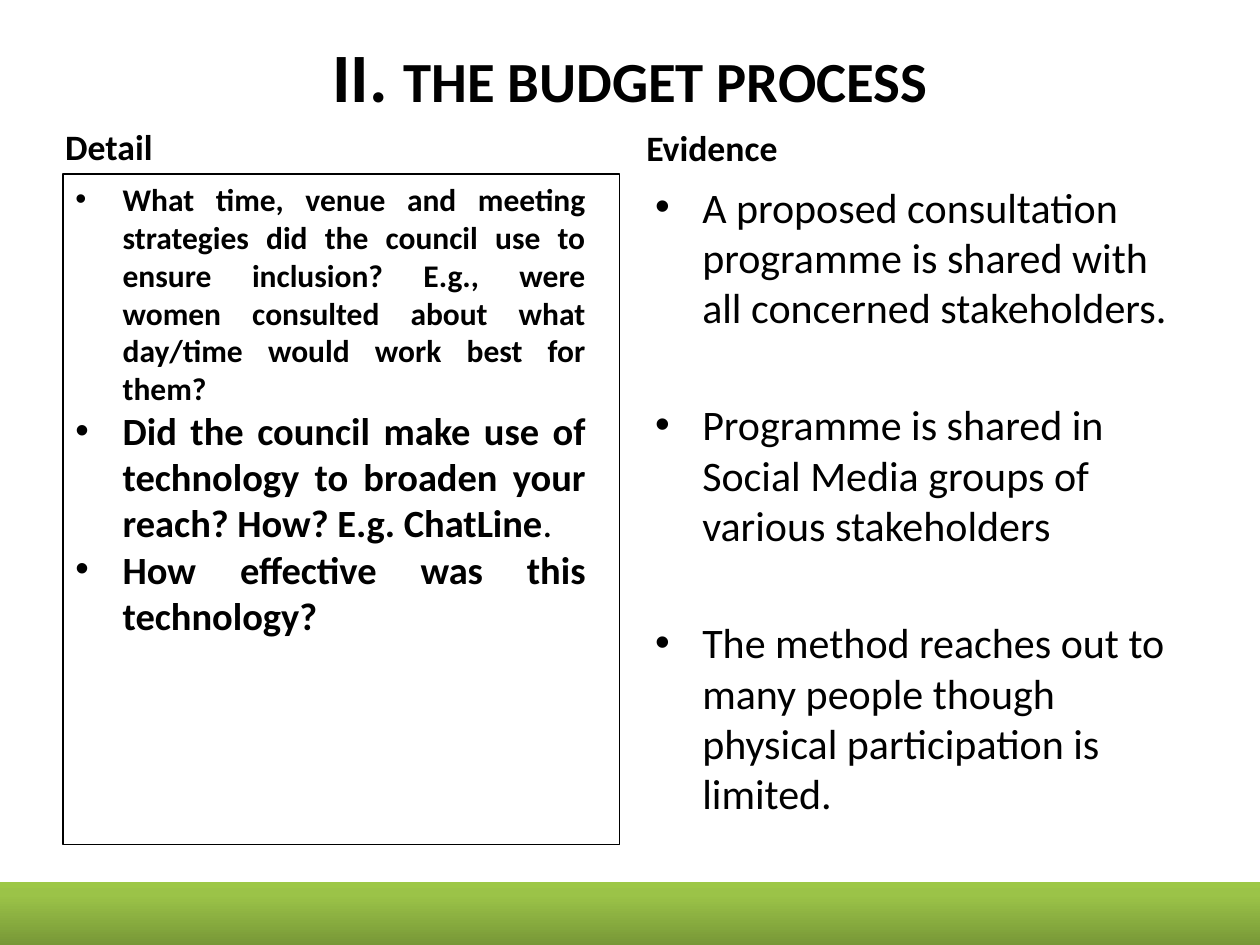
from copy import deepcopy
from lxml import etree
from pptx import Presentation
from pptx.dml.color import RGBColor
from pptx.enum import shapes, text
from pptx.oxml import ns
from pptx.util import Pt

BLACK = RGBColor(0x00, 0x00, 0x00)
GREEN_STOPS = [
    (0, RGBColor(0x77, 0x97, 0x37)),
    (0.8, RGBColor(0x9B, 0xC3, 0x48)),
    (1, RGBColor(0x9D, 0xC7, 0x46)),
]


def add_box(left, top, width, height, anchor):
    box = slide.shapes.add_textbox(Pt(left), Pt(top), Pt(width), Pt(height))
    box.text_frame.word_wrap = True
    box.text_frame.vertical_anchor = anchor
    return box


def write(paragraph, words, size, bold, bullet=False):
    paragraph.text = words
    font = paragraph.font
    font.name, font.size, font.bold = "Calibri", Pt(size), bold
    font.color.rgb = BLACK
    if bullet:
        properties = paragraph._p.get_or_add_pPr()
        properties.set("marL", str(Pt(27)))
        properties.set("indent", str(Pt(-27)))
        mark_font = etree.Element(ns.qn("a:buFont"), typeface="Arial")
        mark = etree.Element(ns.qn("a:buChar"), char="•")
        properties.insert(0, mark_font)
        mark_font.addnext(mark)


prs = Presentation()
prs.slide_width, prs.slide_height = Pt(720), Pt(540)
slide = prs.slides.add_slide(prs.slide_layouts[6])

title = add_box(36, 21.6, 648, 90, text.MSO_ANCHOR.MIDDLE).text_frame
title.margin_top, title.margin_bottom = 0, Pt(48)
heading = title.paragraphs[0]
write(heading, "II. ", 39.6, True)
heading.alignment = text.PP_ALIGN.CENTER
topic = heading.add_run()
topic.text = "THE BUDGET PROCESS"
topic.font.size = Pt(32.4)

for label, left, top in [("Detail", 30.2, 72), ("Evidence", 362.2, 72.7)]:
    header = add_box(left, top, 318.2, 27.4, text.MSO_ANCHOR.BOTTOM)
    write(header.text_frame.paragraphs[0], label, 20.4, True)

detail = add_box(36, 99.4, 318.2, 383, text.MSO_ANCHOR.TOP)
detail.line.color.rgb = BLACK
detail.line.width = Pt(0.75)
detail.text_frame.margin_right = Pt(19.5)
questions = [
    ("What time, venue and meeting strategies did the council use to ensure inclusion? "
     "E.g., were women consulted about what day/time would work best for them?", 18),
    ("Did the council make use of technology to broaden your reach? How? E.g. ChatLine", 22),
    ("How effective was this technology?", 22),
]
for number, (question, size) in enumerate(questions):
    frame = detail.text_frame
    item = frame.add_paragraph() if number else frame.paragraphs[0]
    write(item, question, size, True, bullet=True)
    item.alignment = text.PP_ALIGN.JUSTIFY
full_stop = detail.text_frame.paragraphs[1].add_run()
full_stop.text = "."
full_stop.font.bold = False

bar = slide.shapes.add_shape(shapes.MSO_SHAPE.RECTANGLE, 0, Pt(504), Pt(735), Pt(36.5))
bar.shadow.inherit = False
bar.line.fill.background()
bar.fill.gradient()
bar.fill.gradient_angle = 90
last_stop = bar._element.spPr.findall(".//" + ns.qn("a:gs"))[-1]
last_stop.addnext(deepcopy(last_stop))
for stop, (position, color) in zip(bar.fill.gradient_stops, GREEN_STOPS):
    stop.position = position
    stop.color.rgb = color

evidence = add_box(367.2, 100, 318.2, 382.4, text.MSO_ANCHOR.TOP).text_frame
findings = [
    "A proposed consultation programme is shared with all concerned stakeholders.",
    "Programme is shared in Social Media groups of various stakeholders",
    "The method reaches out to many people though physical participation is limited.",
]
for number, finding in enumerate(findings):
    item = evidence.add_paragraph() if number else evidence.paragraphs[0]
    write(item, finding, 24, False, bullet=True)
    item.space_before = Pt(38 if number else 0)

prs.save("out.pptx")
